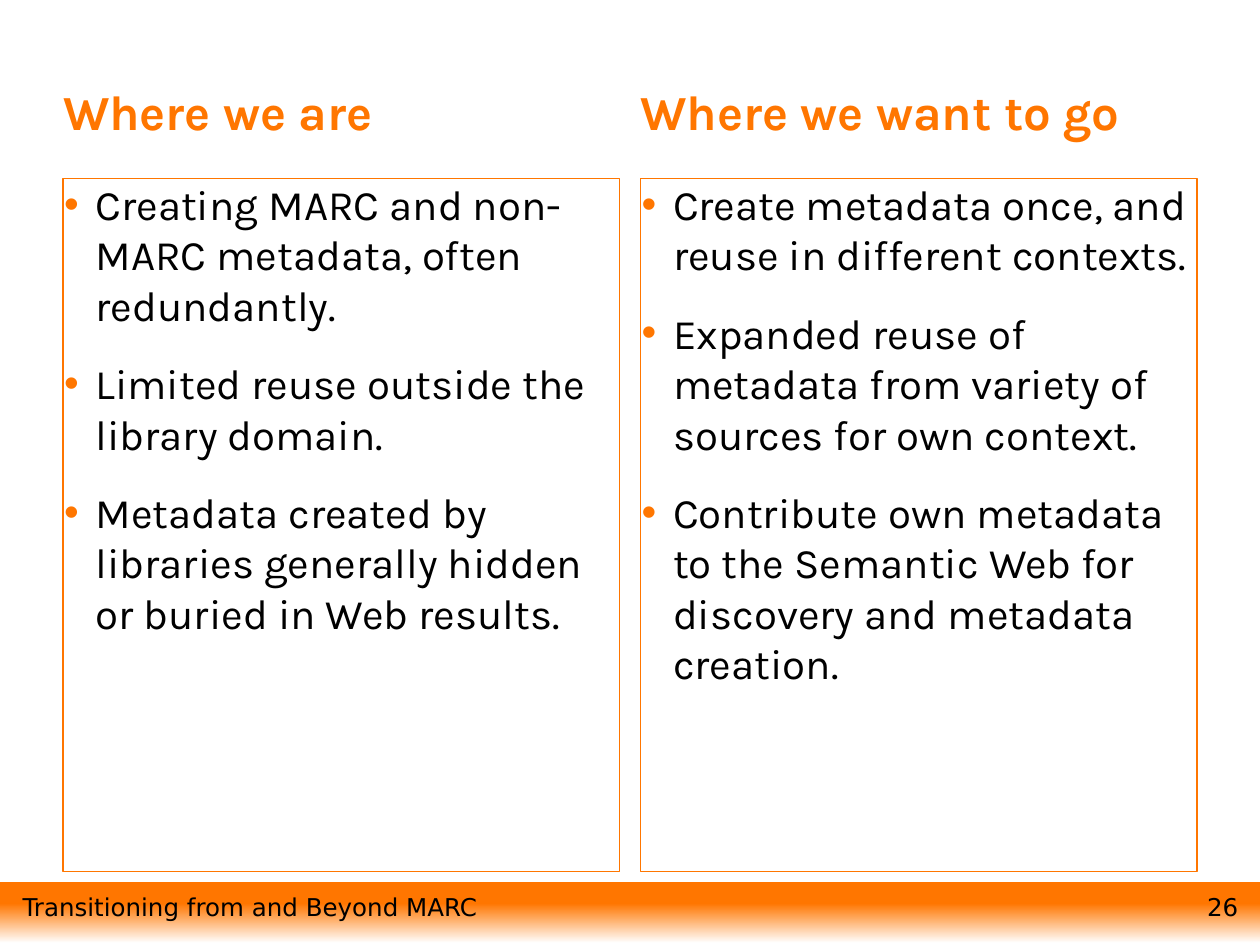
"""Build the slide that compares where we are with where we want to go."""
from lxml.etree import SubElement
from pptx import Presentation
from pptx.dml.color import RGBColor
from pptx.enum.shapes import MSO_SHAPE as Shape
from pptx.enum.text import MSO_ANCHOR as Anchor, MSO_AUTO_SIZE as AutoSize, PP_ALIGN as Align
from pptx.oxml.ns import qn
from pptx.util import Pt

COLORS = {"accent": "FF7600", "text": "000000", "paper": "FFFFFF"}
COLUMNS = [
    ("Where we are", [
        "Creating MARC and non-MARC metadata, often redundantly.",
        "Limited reuse outside the library domain.",
        "Metadata created by libraries generally hidden or buried in Web results.",
    ]),
    ("Where we want to go", [
        "Create metadata once, and reuse in different contexts.",
        "Expanded reuse of metadata from variety of sources for own context.",
        "Contribute own metadata to the Semantic Web for discovery and metadata creation.",
    ]),
]


class SlideBuilder:
    """Hold the style and the current slide."""

    body_font = "Karla"
    footer_font = "DejaVu Sans"

    def __init__(self, slide):
        self.slide = slide

    def color(self, name):
        return RGBColor.from_string(COLORS[name])

    def place(self, box, left, top, width, height):
        box.left, box.top, box.width, box.height = map(Pt, (left, top, width, height))

    def style(self, para, font, size, color, bold=False):
        for span in para.runs:
            span.font.name = font
            span.font.size = Pt(size)
            span.font.bold = bold
            span.font.color.rgb = self.color(color)

    def fill_body(self, index, area, text, anchor):
        box = self.slide.placeholders[index]
        self.place(box, *area)
        frame = box.text_frame
        frame.text = text
        frame.word_wrap = True
        frame.auto_size = AutoSize.NONE
        frame.vertical_anchor = anchor
        frame.margin_left = frame.margin_right = frame.margin_top = frame.margin_bottom = 0
        for para in frame.paragraphs:
            para.space_before = Pt(0)
            para.space_after = Pt(16)
        return box

    def heading(self, index, area, text):
        box = self.fill_body(index, area, text, Anchor.BOTTOM)
        self.style(box.text_frame.paragraphs[0], self.body_font, 28, "accent", bold=True)

    def bullet_list(self, index, area, items):
        box = self.fill_body(index, area, "\n".join(items), Anchor.TOP)
        box.line.color.rgb = self.color("accent")
        box.line.width = Pt(0.75)
        for para in box.text_frame.paragraphs:
            self.style(para, self.body_font, 24, "text")
            self.bullet(para)

    def bullet(self, para):
        properties = para._p.get_or_add_pPr()
        properties.set("marL", str(Pt(18.6)))
        properties.set("indent", str(Pt(-18)))
        bullet_color = SubElement(properties, qn("a:buClr"))
        SubElement(bullet_color, qn("a:srgbClr")).set("val", COLORS["accent"])
        SubElement(properties, qn("a:buChar")).set("char", "•")

    def footer_band(self, left, top, width, height):
        band = self.slide.shapes.add_shape(Shape.RECTANGLE, *map(Pt, (left, top, width, height)))
        band.shadow.inherit = False
        band.line.fill.background()
        band.fill.gradient()
        band.fill.gradient_angle = 270
        stops = zip(band.fill.gradient_stops, ("accent", "paper"), (0.34, 0.97))
        for stop, color, position in stops:
            stop.color.rgb = self.color(color)
            stop.position = position

    def footer_text(self, left, width, text, align):
        box = self.slide.shapes.add_textbox(*map(Pt, (left, 506.2, width, 24.2)))
        box.text_frame.word_wrap = True
        para = box.text_frame.paragraphs[0]
        para.text = text
        para.alignment = align
        self.style(para, self.footer_font, 14, "text")


def main():
    deck = Presentation()
    deck.slide_width, deck.slide_height = Pt(720), Pt(540)
    page = deck.slides.add_slide(deck.slide_layouts.get_by_name("Comparison"))
    title = page.shapes.title.element
    title.getparent().remove(title)
    builder = SlideBuilder(page)

    builder.footer_band(0, 504, 720, 36)
    builder.footer_text(5.8, 408, "Transitioning from and Beyond MARC", Align.LEFT)
    builder.footer_text(666.7, 48, "26", Align.RIGHT)

    margin, gap = 36, 12
    width = (720 - 2 * margin - gap) / 2
    for column, (heading, items) in enumerate(COLUMNS):
        left = margin + column * (width + gap)
        builder.heading(1 + 2 * column, (left, 30, width, 50.4), heading)
        builder.bullet_list(2 + 2 * column, (left, 102, width, 396), items)

    deck.save("out.pptx")


if __name__ == "__main__":
    main()
